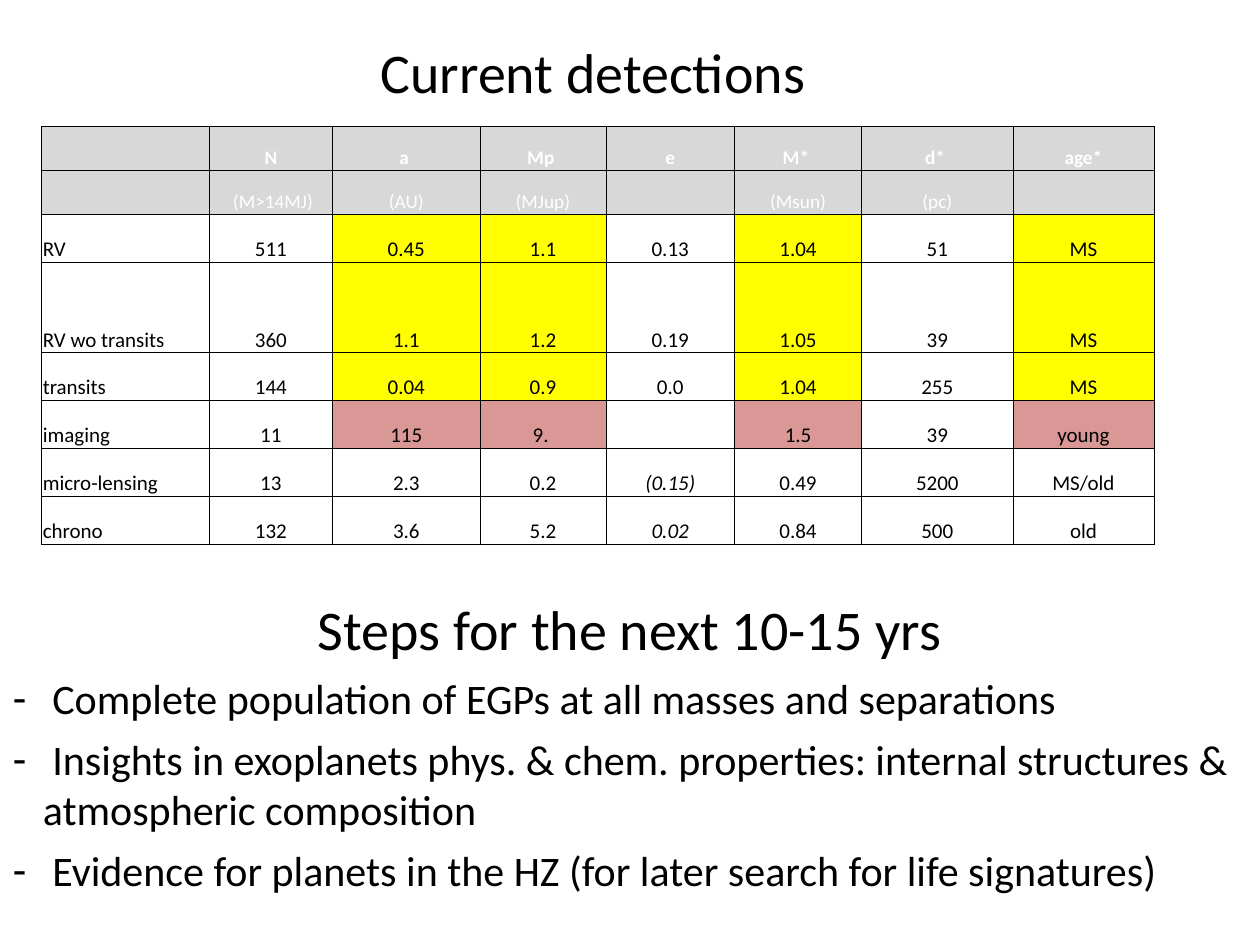
from dataclasses import dataclass

from pptx import Presentation
from pptx.dml.color import RGBColor
from pptx.enum import text
from pptx.oxml import ns
from pptx.util import Inches, Pt
from lxml import etree


@dataclass(frozen=True)
class Theme:
    font: str = "Calibri"
    black: str = "000000"
    white: str = "FFFFFF"
    grey: str = "D8D8D8"
    yellow: str = "FFFF00"
    rose: str = "D99795"
    title: int = 32
    body: int = 24
    head: int = 11
    cell: int = 12
    border: float = 0.5


T = Theme()


@dataclass(frozen=True)
class Row:
    values: tuple[str, ...]
    height: float = 0.38
    fill: str = T.white
    highlight: str | None = None
    color: str = T.black
    size: int = T.cell
    bold: bool = False


HIGHLIGHT_COLS = {2, 3, 5, 7}  # a, Mp, M*, age*
ITALIC_VALUES = {"(0.15)", "0.02"}
COL_WIDTHS = (1.33, 0.98, 1.17, 1, 1.02, 1.01, 1.2, 1.12)
HEAD = dict(height=0.35, fill=T.grey, color=T.white, size=T.head)
ROWS = (
    Row(("", "N", "a ", "Mp ", "e", "M* ", "d* ", "age*"), bold=True, **HEAD),
    Row(("", " (M>14MJ)", "(AU)", "(MJup)", "", "(Msun)", "(pc)", ""), **HEAD),
    Row(("RV", "511", "0.45", "1.1", "0.13", "1.04", "51", "MS"), highlight=T.yellow),
    Row(("RV wo transits", "360", "1.1", "1.2", "0.19", "1.05", "39", "MS"),
        height=0.72, highlight=T.yellow),
    Row(("transits", "144", "0.04", "0.9", "0.0", "1.04", "255", "MS"), highlight=T.yellow),
    Row(("imaging", "11", "115", "9. ", "", "1.5", "39", "young"), highlight=T.rose),
    Row(("micro-lensing", "13", "2.3", "0.2", "(0.15)", "0.49", "5200", "MS/old")),
    Row(("chrono", "132", "3.6", "5.2", "0.02", "0.84", "500", "old")),
)
STEPS_HEADING = "Steps for the next 10-15 yrs"
STEPS = (
    " Complete population of EGPs at all masses and separations",
    " Insights in exoplanets phys. & chem. properties: internal structures & "
    "atmospheric composition",
    " Evidence for planets in the HZ (for later search for life signatures)",
)


def place(sp, left: float, top: float, width: float, height: float) -> None:
    sp.left, sp.top, sp.width, sp.height = map(Inches, (left, top, width, height))
    tf = sp.text_frame
    tf.word_wrap = True
    tf.auto_size = text.MSO_AUTO_SIZE.NONE
    tf.vertical_anchor = text.MSO_ANCHOR.TOP


def style(p, size: int, color: str = T.black, bold: bool = False, italic: bool = False) -> None:
    for r in p.runs:
        r.font.name, r.font.size = T.font, Pt(size)
        r.font.bold, r.font.italic = bold, italic
        r.font.color.rgb = RGBColor.from_string(color)


def set_bullet(p, char: str | None, indent: float = 0) -> None:
    """Give the paragraph a hanging bullet, or none when char is None."""
    pPr = p._p.get_or_add_pPr()
    pPr.set("marL", str(Inches(indent)))
    pPr.set("indent", str(-Inches(indent)))
    if char is None:
        etree.SubElement(pPr, ns.qn("a:buNone"))
    else:
        etree.SubElement(pPr, ns.qn("a:buChar")).set("char", char)


def set_borders(cell) -> None:
    tcPr = cell._tc.get_or_add_tcPr()
    for i, side in enumerate(("lnL", "lnR", "lnT", "lnB")):
        ln = etree.Element(ns.qn(f"a:{side}"), w=str(Pt(T.border)))
        fill = etree.SubElement(ln, ns.qn("a:solidFill"))
        etree.SubElement(fill, ns.qn("a:srgbClr")).set("val", T.black)
        tcPr.insert(i, ln)


def fill_cell(cell, row: Row, col: int) -> None:
    value = row.values[col]
    cell.margin_left = cell.margin_right = cell.margin_top = Inches(0.01)
    cell.margin_bottom = 0
    cell.vertical_anchor = text.MSO_ANCHOR.BOTTOM
    highlighted = row.highlight and col in HIGHLIGHT_COLS
    cell.fill.solid()
    cell.fill.fore_color.rgb = RGBColor.from_string(row.highlight if highlighted else row.fill)
    set_borders(cell)
    if value:
        p = cell.text_frame.paragraphs[0]
        p.text = value
        p.alignment = text.PP_ALIGN.CENTER if col else text.PP_ALIGN.LEFT
        style(p, row.size, row.color, row.bold, value in ITALIC_VALUES)


def add_title(s) -> None:
    sp = s.shapes.title
    place(sp, 2.92, 0.25, 6.08, 0.64)
    p = sp.text_frame.paragraphs[0]
    p.text = "Current detections"
    p.alignment = text.PP_ALIGN.LEFT
    style(p, T.title)


def add_steps(s) -> None:
    sp = s.placeholders[1]
    place(sp, 0, 4.67, 10, 2.51)
    tf = sp.text_frame
    tf.text = "\n".join((STEPS_HEADING, *STEPS))
    for i, p in enumerate(tf.paragraphs):
        p.space_before, p.space_after = Pt(0), Pt(6)
        p.alignment = text.PP_ALIGN.LEFT if i else text.PP_ALIGN.CENTER
        set_bullet(p, "-" if i else None, 0.24 if i else 0)
        style(p, T.body if i else T.title)


def add_detections(s) -> None:
    frame = s.shapes.add_table(
        len(ROWS), len(COL_WIDTHS), Inches(0.33), Inches(1),
        Inches(sum(COL_WIDTHS)), Inches(sum(row.height for row in ROWS)))
    table = frame.table
    table.first_row = table.horz_banding = False
    for column, width in zip(table.columns, COL_WIDTHS):
        column.width = Inches(width)
    for i, row in enumerate(ROWS):
        table.rows[i].height = Inches(row.height)
        for col in range(len(COL_WIDTHS)):
            fill_cell(table.cell(i, col), row, col)


def main() -> None:
    prs = Presentation()
    prs.slide_width, prs.slide_height = Inches(10), Inches(7.5)
    s = prs.slides.add_slide(prs.slide_layouts[1])
    add_title(s)
    add_steps(s)
    add_detections(s)
    prs.save("out.pptx")


if __name__ == "__main__":
    main()
